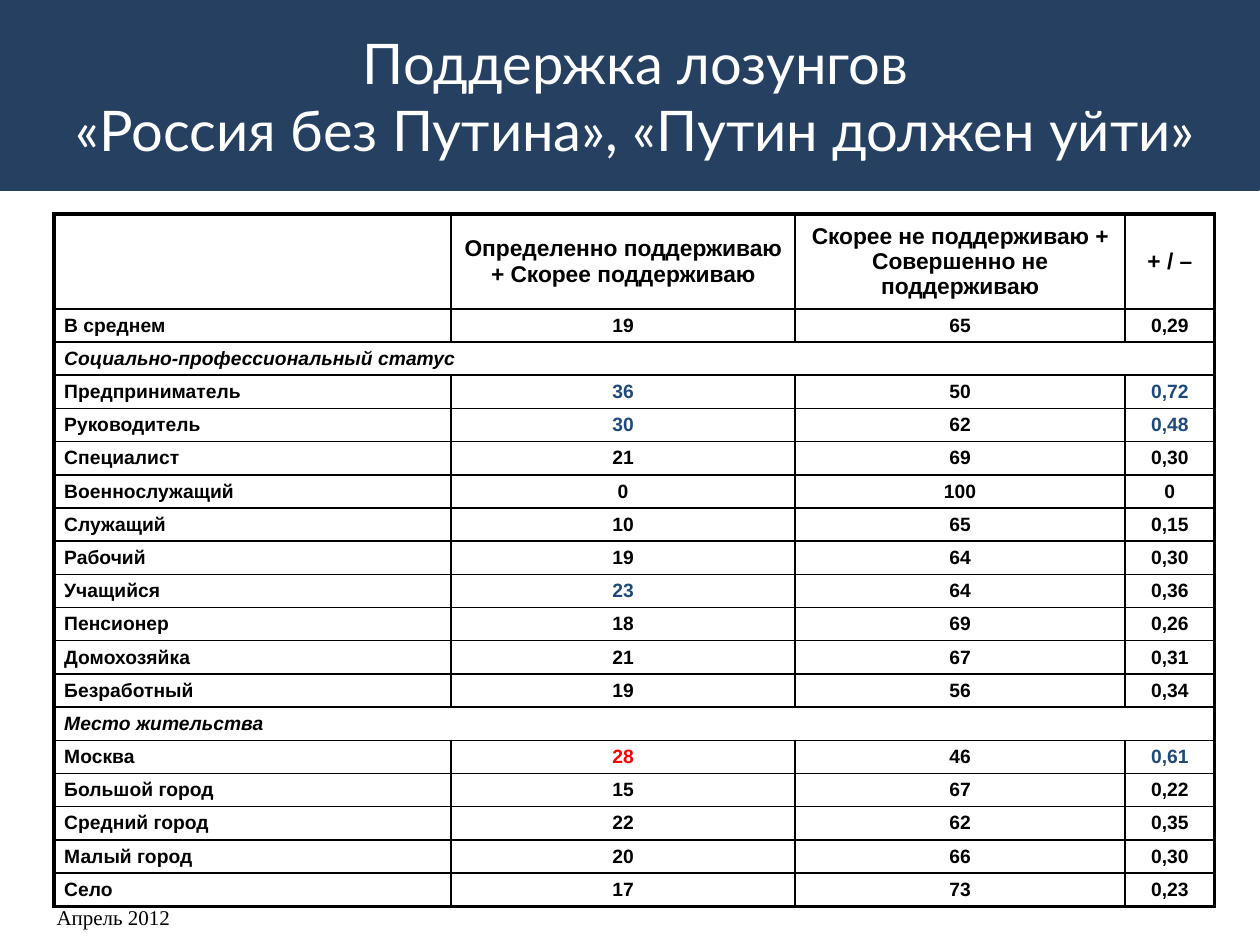
import pptx
import pptx.dml.color
import pptx.enum.shapes
import pptx.enum.text
import pptx.oxml
import pptx.oxml.ns
import pptx.util
from pptx.util import Inches, Pt

RGBColor = pptx.dml.color.RGBColor
Align = pptx.enum.text.PP_ALIGN
Anchor = pptx.enum.text.MSO_ANCHOR

NAVY = RGBColor(0x25, 0x40, 0x61)
BLUE = RGBColor(0x1F, 0x49, 0x7D)
RED = RGBColor(0xFF, 0x00, 0x00)
BLACK = RGBColor(0x00, 0x00, 0x00)
WHITE = RGBColor(0xFF, 0xFF, 0xFF)

# Content: rows with a single entry are section headings across the table
TITLE = "Поддержка лозунгов\v«Россия без Путина», «Путин должен уйти»"
DATE = "Апрель 2012"
ROWS = [
    ("", "Определенно поддерживаю + Скорее поддерживаю",
     "Скорее не поддерживаю + Совершенно не поддерживаю", "+ / –"),
    ("В среднем", "19", "65", "0,29"),
    ("Социально-профессиональный статус",),
    ("Предприниматель", "36", "50", "0,72"),
    ("Руководитель", "30", "62", "0,48"),
    ("Специалист", "21", "69", "0,30"),
    ("Военнослужащий", "0", "100", "0"),
    ("Служащий", "10", "65", "0,15"),
    ("Рабочий", "19", "64", "0,30"),
    ("Учащийся", "23", "64", "0,36"),
    ("Пенсионер", "18", "69", "0,26"),
    ("Домохозяйка", "21", "67", "0,31"),
    ("Безработный", "19", "56", "0,34"),
    ("Место жительства",),
    ("Москва", "28", "46", "0,61"),
    ("Большой город", "15", "67", "0,22"),
    ("Средний город", "22", "62", "0,35"),
    ("Малый город", "20", "66", "0,30"),
    ("Село", "17", "73", "0,23"),
]
HIGHLIGHTS = {
    ("Предприниматель", 1): BLUE, ("Предприниматель", 3): BLUE,
    ("Руководитель", 1): BLUE, ("Руководитель", 3): BLUE,
    ("Учащийся", 1): BLUE,
    ("Москва", 1): RED, ("Москва", 3): BLUE,
}

# Table grid, in inches
COLUMN_WIDTHS = [3.15, 2.73, 2.62, 0.71]
TABLE_LEFT, TABLE_TOP, TABLE_HEIGHT = 0.43, 1.7, 5.48
HEADER_HEIGHT = 0.75
BODY_HEIGHT = (TABLE_HEIGHT - HEADER_HEIGHT) / (len(ROWS) - 1)
OUTER, INNER = 2.25, 1


def style(paragraph, font_name, size, color, align=Align.LEFT):
    paragraph.alignment = align
    paragraph.font.name = font_name
    paragraph.font.size = Pt(size)
    paragraph.font.color.rgb = color


def set_borders(cell, widths):
    properties = cell._tc.get_or_add_tcPr()
    for side, width in zip("LRTB", widths):
        properties.append(pptx.oxml.parse_xml(
            f'<a:ln{side} {pptx.oxml.ns.nsdecls("a")} w="{int(Pt(width))}">'
            f'<a:solidFill><a:srgbClr val="{BLACK}"/></a:solidFill></a:ln{side}>'))


def set_margins(cell, left, right, vertical):
    cell.margin_left, cell.margin_right = Inches(left), Inches(right)
    cell.margin_top = cell.margin_bottom = Inches(vertical)


def fill_cell(table, row, column):
    cell = table.cell(row, column)
    entries = ROWS[row]
    last_row, last_column = len(ROWS) - 1, len(COLUMN_WIDTHS) - 1
    set_borders(cell, [OUTER if edge else INNER for edge in (
        column == 0, column == last_column or len(entries) == 1,
        row == 0, row == last_row)])
    cell.vertical_anchor = Anchor.MIDDLE
    if row == 0:
        cell.fill.background()
        set_margins(cell, 0.04, 0.04, 0.05)
    else:
        cell.fill.solid()
        cell.fill.fore_color.rgb = WHITE
        set_margins(cell, 0 if column else 0.08, 0, 0.04)
    if column < len(entries):
        cell.text = entries[column]
    paragraph = cell.text_frame.paragraphs[0]
    style(paragraph, "Arial", 11 if row else 13,
          HIGHLIGHTS.get((entries[0], column), BLACK),
          Align.CENTER if column else Align.LEFT)
    paragraph.font.bold = True
    paragraph.font.italic = len(entries) == 1


def main():
    deck = pptx.Presentation()
    deck.slide_width, deck.slide_height = Inches(10), Inches(7.5)
    slide = deck.slides.add_slide(deck.slide_layouts[5])
    shapes = slide.shapes

    # Title on a dark band
    title = shapes.title
    title.left, title.top = Inches(0.2), Inches(0.13)
    title.width, title.height = Inches(9.69), Inches(1.26)
    title.text_frame.text = TITLE
    title.text_frame.vertical_anchor = Anchor.MIDDLE
    style(title.text_frame.paragraphs[0], "Lato", 32, WHITE, Align.CENTER)

    band = shapes.add_shape(pptx.enum.shapes.MSO_SHAPE.RECTANGLE,
                            0, 0, Inches(9.99), Inches(1.5))
    band.shadow.inherit = False
    band.fill.solid()
    band.fill.fore_color.rgb = NAVY
    band.line.color.rgb = NAVY
    band.line.width = Pt(2)
    title.element.addprevious(band.element)

    # Survey date
    date = shapes.add_textbox(Inches(0.35), Inches(7.13), Inches(9.45), Inches(0.3))
    date.text_frame.word_wrap = True
    date.text_frame.vertical_anchor = Anchor.MIDDLE
    date.text_frame.text = DATE
    style(date.text_frame.paragraphs[0], "Times New Roman", 12, BLACK)

    # Support by group
    table = shapes.add_table(
        len(ROWS), len(COLUMN_WIDTHS), Inches(TABLE_LEFT), Inches(TABLE_TOP),
        Inches(sum(COLUMN_WIDTHS)), Inches(TABLE_HEIGHT)).table
    table.first_row = table.horz_banding = False
    for column, width in enumerate(COLUMN_WIDTHS):
        table.columns[column].width = Inches(width)
    for row, entries in enumerate(ROWS):
        table.rows[row].height = Inches(BODY_HEIGHT if row else HEADER_HEIGHT)
        for column in range(len(COLUMN_WIDTHS)):
            fill_cell(table, row, column)
        if len(entries) == 1:
            table.cell(row, 0).merge(table.cell(row, len(COLUMN_WIDTHS) - 1))

    deck.save("out.pptx")


if __name__ == "__main__":
    main()
